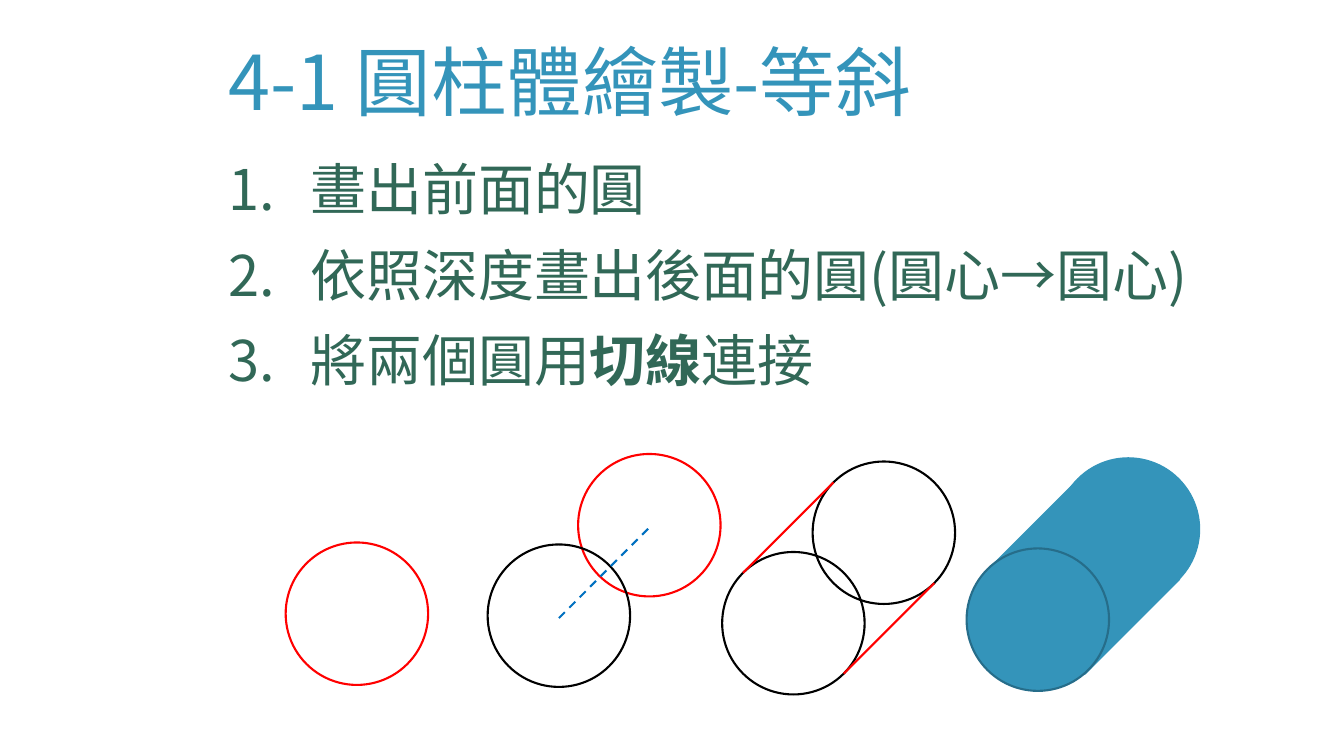
from dataclasses import dataclass
from math import sqrt
from lxml.etree import SubElement
from pptx import Presentation
from pptx.dml.color import RGBColor
from pptx.enum.dml import MSO_LINE
from pptx.enum.shapes import MSO_CONNECTOR, MSO_SHAPE
from pptx.enum.text import MSO_ANCHOR, MSO_AUTO_SIZE, PP_ALIGN
from pptx.oxml.ns import qn
from pptx.util import Cm, Pt


@dataclass(frozen=True)
class Theme:
    font: str = "Noto Sans CJK TC"
    blue: str = "3494BA"
    green: str = "316857"
    red: str = "FF0000"
    black: str = "000000"
    rim: str = "266D8A"
    axis: str = "0070C0"
    title: int = 54
    body: int = 40
    thin: float = 1
    line: float = 1.5


look = Theme()
title = [[("4-1 圓柱體繪製-等斜", False)]]
steps = [
    [("畫出前面的圓", False)],
    [("依照深度畫出後面的圓(圓心→圓心)", False)],
    [("將兩個圓用", False), ("切線", True), ("連接", False)],
]
fronts = {
    "first": (7.2, 13.67),
    "second": (12.29, 13.72),
    "third": (18.2, 13.91),
    "solid": (24.36, 13.82),
}
size = 3.59
depth = 2.28
indent = 2.06

deck = Presentation()
deck.slide_width, deck.slide_height = Cm(33.87), Cm(19.05)
slide = deck.slides.add_slide(deck.slide_layouts[5])


def write(shape, paras, *, pt, color, space, anchor, gap=0, number=False):
    frame = shape.text_frame
    frame.word_wrap = True
    frame.auto_size = MSO_AUTO_SIZE.NONE
    frame.vertical_anchor = anchor
    for i, runs in enumerate(paras):
        para = frame.add_paragraph() if i else frame.paragraphs[0]
        if number:
            props = para._p.get_or_add_pPr()
            props.set("marL", str(Cm(indent)))
            props.set("indent", str(-Cm(indent)))
            SubElement(props, qn("a:buFont"), typeface=look.font)
            SubElement(props, qn("a:buAutoNum"), type="arabicPeriod")
        para.alignment = PP_ALIGN.LEFT
        para.line_spacing = space
        para.space_before = Pt(gap if i else 0)
        for text, bold in runs:
            run = para.add_run()
            run.text = text
            font = run.font
            font.name, font.size, font.bold = look.font, Pt(pt), bold
            font.color.rgb = RGBColor.from_string(color)
            SubElement(run._r.get_or_add_rPr(), qn("a:ea"), typeface=look.font)


def draw(home, kind, x, y, w, h, line, fill=None, width=look.line):
    shape = home.add_shape(kind, Cm(x), Cm(y), Cm(w), Cm(h))
    shape.shadow.inherit = False
    if fill:
        shape.fill.solid()
        shape.fill.fore_color.rgb = RGBColor.from_string(fill)
    else:
        shape.fill.background()
    shape.line.color.rgb = RGBColor.from_string(line)
    shape.line.width = Pt(width)
    return shape


def ring(spot, line, home=slide.shapes, **style):
    return draw(home, MSO_SHAPE.OVAL, *spot, size, size, line, **style)


def link(x, y, color, dash=None):
    line = slide.shapes.add_connector(
        MSO_CONNECTOR.STRAIGHT, Cm(x), Cm(y), Cm(x + depth), Cm(y - depth))
    line.line.color.rgb = RGBColor.from_string(color)
    line.line.width = Pt(look.line)
    if dash:
        line.line.dash_style = dash
    SubElement(line._element.spPr, qn("a:effectLst"))


def back(spot):
    return spot[0] + depth, spot[1] - depth


def center(spot):
    return spot[0] + size / 2, spot[1] + size / 2


head = slide.shapes.title
head.left, head.top, head.width, head.height = Cm(5.51), Cm(1.07), Cm(26.04), Cm(2.24)
write(head, title, pt=look.title, color=look.blue, space=0.85, anchor=MSO_ANCHOR.BOTTOM)
body = slide.shapes.add_textbox(Cm(5.51), Cm(3.96), Cm(26.04), Cm(14.02))
write(body, steps, pt=look.body, color=look.green, space=0.9,
      anchor=MSO_ANCHOR.TOP, gap=18, number=True)

ring(fronts["first"], look.red)

spot = fronts["second"]
ring(back(spot), look.red)
ring(spot, look.black)
x, y = center(spot)
link(x, y + 0.06, look.axis, MSO_LINE.DASH)

spot = fronts["third"]
ring(back(spot), look.black)
ring(spot, look.black)
x, y = center(spot)
reach = size / 2 / sqrt(2)
for side in (-1, 1):
    link(x + side * reach, y + side * reach, look.red)

spot = fronts["solid"]
solid = slide.shapes.add_group_shape().shapes
ring(back(spot), look.blue, solid, fill=look.blue, width=look.thin)
x, y = center(spot)
long = 3.38
side = draw(solid, MSO_SHAPE.RECTANGLE, x + depth / 2 - long / 2 - 0.03,
            y - depth / 2 - size / 2 + 0.05, long, size,
            look.blue, fill=look.blue, width=look.thin)
side.rotation = 315
ring(spot, look.rim, solid, fill=look.blue)

deck.save("out.pptx")
